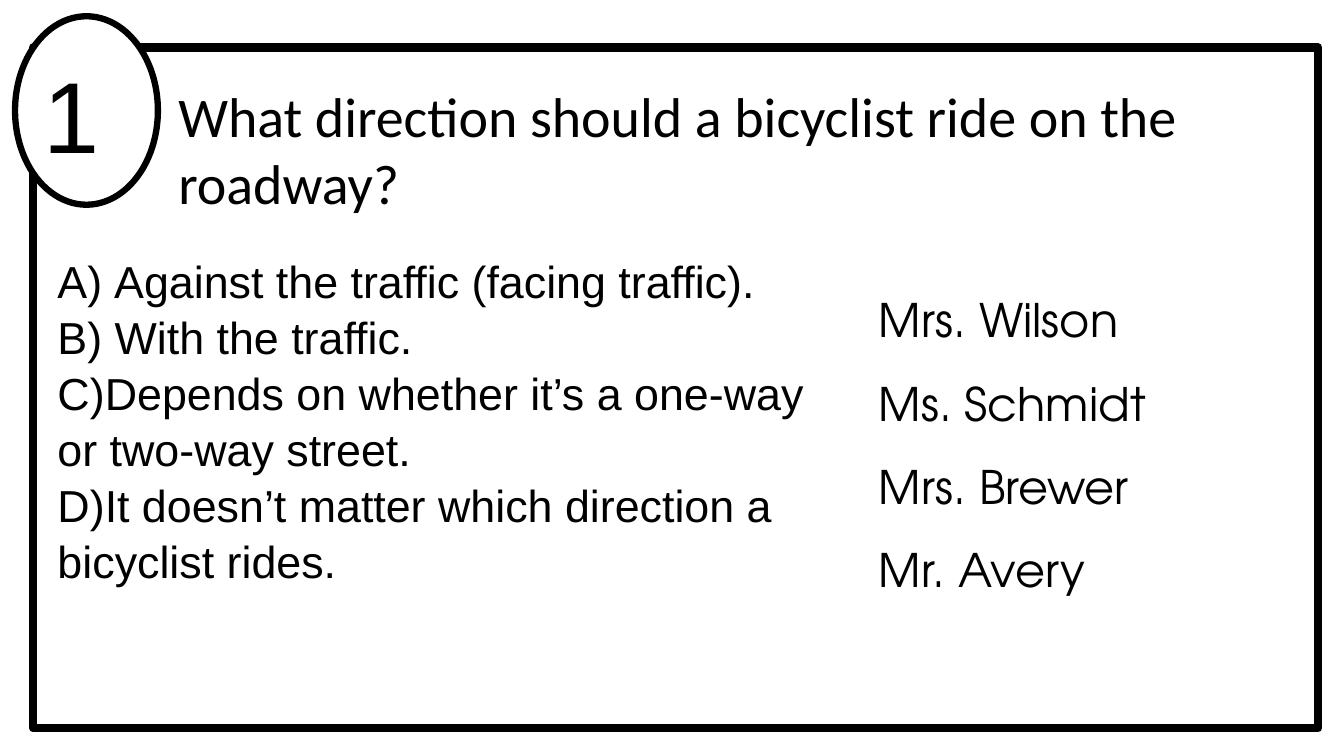
from pptx import Presentation
from pptx.dml.color import RGBColor
from pptx.enum.shapes import MSO_SHAPE
from pptx.enum.text import MSO_ANCHOR, MSO_AUTO_SIZE, PP_ALIGN
from pptx.oxml.ns import qn
from pptx.util import Cm, Pt
from lxml.etree import SubElement

COLOURS = {"ink": "000000", "paper": "FFFFFF"}
ANSWERS = [
    "Against the traffic (facing traffic).",
    "B) With the traffic.",
    "C)Depends on whether it’s a one-way or two-way street.",
    "D)It doesn’t matter which direction a bicyclist rides.",
]
NAMES = ["Mrs. Wilson", "Ms. Schmidt", "Mrs. Brewer", "Mr. Avery"]


class QuizSlide:
    """Holds the style and the slide; every box is (left, top, width, height) in cm."""

    def __init__(self, presentation):
        self.slide = presentation.slides.add_slide(presentation.slide_layouts[5])
        self.ink = RGBColor.from_string(COLOURS["ink"])
        self.paper = RGBColor.from_string(COLOURS["paper"])

    def outline(self, kind, box, line_width, filled=False):
        shape = self.slide.shapes.add_shape(kind, *map(Cm, box))
        shape.shadow.inherit = False
        if filled:
            shape.fill.solid()
            shape.fill.fore_color.rgb = self.paper
        else:
            shape.fill.background()
        shape.line.color.rgb = self.ink
        shape.line.width = Pt(line_width)

    def set_text(self, shape, lines, font, size, spacing=1.0):
        text_frame = shape.text_frame
        text_frame.text = "\n".join(lines)
        text_frame.word_wrap = True
        text_frame.auto_size = MSO_AUTO_SIZE.NONE
        text_frame.vertical_anchor = MSO_ANCHOR.TOP
        for paragraph in text_frame.paragraphs:
            paragraph.alignment = PP_ALIGN.LEFT
            paragraph.line_spacing = spacing
            for run in paragraph.runs:
                run.font.name = font
                run.font.size = Pt(size)
                run.font.color.rgb = self.ink

    def title(self, box, text, font, size):
        shape = self.slide.shapes.title
        shape.left, shape.top, shape.width, shape.height = map(Cm, box)
        self.set_text(shape, [text], font, size)

    def text(self, box, lines, font, size, spacing=1.0):
        shape = self.slide.shapes.add_textbox(*map(Cm, box))
        self.set_text(shape, lines, font, size, spacing)
        return shape

    def letter(self, paragraph, indent):
        """Give the paragraph an automatic "A)" with a hanging indent in cm."""
        properties = paragraph._p.get_or_add_pPr()
        properties.set("marL", str(Cm(indent)))
        properties.set("indent", str(-Cm(indent)))
        SubElement(properties, qn("a:buFont"), typeface="Arial")
        SubElement(properties, qn("a:buAutoNum"), type="alphaUcParenR")


def main():
    presentation = Presentation()
    presentation.slide_width = Cm(33.87)
    presentation.slide_height = Cm(19.05)

    quiz = QuizSlide(presentation)
    quiz.outline(MSO_SHAPE.RECTANGLE, (0.84, 1.2, 32.38, 17.15), 6)
    quiz.outline(MSO_SHAPE.OVAL, (0.38, 0.41, 3.6, 4.75), 4.5, filled=True)
    quiz.title((4.24, 1.93, 27.8, 4.45),
               "What direction should a bicyclist ride on the roadway?", "Calibri", 40)
    answers = quiz.text((1.2, 6.22, 20.5, 9.83), ANSWERS, "Arial", 32, 1.04)
    quiz.letter(answers.text_frame.paragraphs[0], 1.43)
    quiz.text((21.9, 6.53, 11.9, 8.74), NAMES, "TeX Gyre Adventor", 33, 1.5)
    quiz.text((0.84, 1.2, 2.77, 3.33), ["1"], "Arial", 72)

    presentation.save("out.pptx")


if __name__ == "__main__":
    main()
